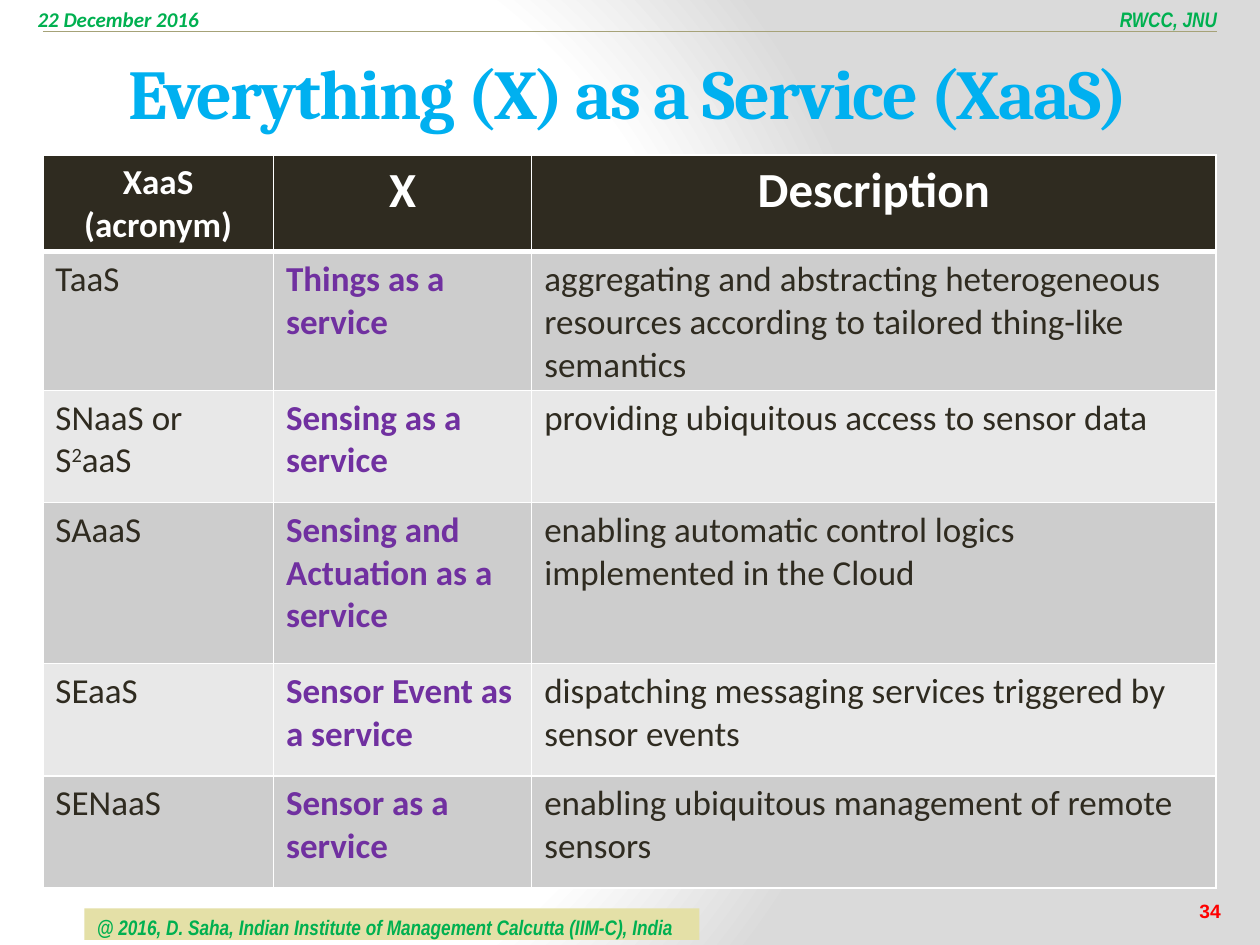
import pptx
import pptx.util
import pptx.dml.color
import pptx.enum.shapes
import pptx.enum.text
import pptx.oxml
import pptx.oxml.ns

PX = 9144  # 100 px to the inch
ALIGN = pptx.enum.text.PP_ALIGN
NS = pptx.oxml.ns.nsdecls("a")
WHITE, DARK, GREEN, PURPLE = "FFFFFF", "2F2B20", "00B050", "7030A0"
BANDS = ["CDCDCD", "E8E8E8"]

COLS = [183, 205, 543]
ROWS = [74, 106, 89, 128, 89, 89]
HEADS = ["XaaS (acronym)", "X", "Description"]
# A caret marks the next letter as superscript
BODY = [
    ["TaaS", "Things as a service",
     "aggregating and abstracting heterogeneous resources according to "
     "tailored thing-like semantics"],
    ["SNaaS or S^2aaS", "Sensing as a service",
     "providing ubiquitous access to sensor data"],
    ["SAaaS", "Sensing and Actuation as a service",
     "enabling automatic control logics implemented in the Cloud"],
    ["SEaaS", "Sensor Event as a service",
     "dispatching messaging services triggered by sensor events"],
    ["SENaaS", "Sensor as a service",
     "enabling ubiquitous management of remote sensors"],
]


def rgb(code):
    return pptx.dml.color.RGBColor.from_string(code)


def paint(shape, code):
    shape.fill.solid()
    shape.fill.fore_color.rgb = rgb(code)


def px(*nums):
    return [pptx.util.Emu(n * PX) for n in nums]


def style(para, size, face, color, bold=False, italic=False, align=ALIGN.LEFT):
    para.alignment = align
    for run in para.runs:
        font = run.font
        font.size, font.name = pptx.util.Pt(size), face
        font.bold, font.italic = bold, italic
        font.color.rgb = rgb(color)


def backdrop(slide):
    fill = slide.background.fill
    fill.gradient()
    stops = "".join(
        f'<a:gs pos="{pos}000"><a:srgbClr val="{code}"/></a:gs>'
        for pos, code in [(0, WHITE), (75, WHITE), (100, "DADADA")])
    grad = pptx.oxml.parse_xml(
        f'<a:gradFill {NS} rotWithShape="1"><a:gsLst>{stops}</a:gsLst>'
        '<a:path path="circle"><a:fillToRect l="20000" t="50000" '
        'r="100000" b="50000"/></a:path></a:gradFill>')
    old = slide.background._cSld.find(".//" + pptx.oxml.ns.qn("a:gradFill"))
    old.getparent().replace(old, grad)


def label(slide, box, text, size, face, color, italic=True,
          align=ALIGN.LEFT, fill=None):
    shape = slide.shapes.add_textbox(*px(*box))
    if fill:
        paint(shape, fill)
    frame = shape.text_frame
    frame.word_wrap = bool(fill)
    if italic:
        frame.margin_right = frame.margin_bottom = 0
    frame.text = text
    style(frame.paragraphs[0], size, face, color, True, italic, align)


def rule(slide, left, right, top):
    line = slide.shapes.add_connector(
        pptx.enum.shapes.MSO_CONNECTOR.STRAIGHT, *px(left, top, right, top))
    line.line.color.rgb = rgb("A6A278")
    line.line.width = pptx.util.Pt(1)
    line._element.spPr.append(pptx.oxml.parse_xml(f"<a:effectLst {NS}/>"))


def margins(slide):
    """Draw the header line and the labels around the slide."""
    label(slide, (942, 709, 39, 28), "34", 11, "Arial", "FF0000", False)
    label(slide, (67, 721, 488, 25),
          "@ 2016, D. Saha, Indian Institute of Management Calcutta (IIM-C), India",
          12, "Arial Narrow", GREEN, fill="E4E0A7")
    label(slide, (878, 0, 88, 25), "RWCC, JNU", 12, "Arial Narrow", GREEN,
          align=ALIGN.RIGHT)
    label(slide, (20, 0, 140, 25), "22 December 2016", 12, "Calibri", GREEN)
    rule(slide, 34, 966, 25)


def heading(slide, box, text):
    title = slide.shapes.title
    title.left, title.top, title.width, title.height = px(*box)
    frame = title.text_frame
    frame.text = text
    frame.auto_size = pptx.enum.text.MSO_AUTO_SIZE.NONE
    frame.vertical_anchor = pptx.enum.text.MSO_ANCHOR.MIDDLE
    para = frame.paragraphs[0]
    style(para, 40, "Cambria", "00B0F0", True, align=ALIGN.CENTER)
    para.runs[0].font._element.set("spc", "-100")


def borders(cell, row):
    wide = {"T": 3 if row == 1 else 1, "B": 3 if row == 0 else 1}
    props = cell._tc.get_or_add_tcPr()
    for spot, side in enumerate("LRTB"):
        props.insert(spot, pptx.oxml.parse_xml(
            f'<a:ln{side} {NS} w="{wide.get(side, 1) * 12700}"><a:solidFill>'
            f'<a:srgbClr val="{WHITE}"/></a:solidFill></a:ln{side}>'))


def write(cell, text):
    """Fill a cell, raising the letter after a caret."""
    para = cell.text_frame.paragraphs[0]
    base, caret, rest = text.partition("^")
    para.text = base
    if caret:
        high = para.add_run()
        high.text = rest[0]
        high.font._element.set("baseline", "30000")
        para.add_run().text = rest[1:]
    return para


def grid(slide, left, top):
    frame = slide.shapes.add_table(
        len(ROWS), len(COLS), *px(left, top, sum(COLS), sum(ROWS)))
    table = frame.table
    for col, width in zip(table.columns, px(*COLS)):
        col.width = width
    for row, height in zip(table.rows, px(*ROWS)):
        row.height = height
    for r, texts in enumerate([HEADS] + BODY):
        for c, text in enumerate(texts):
            cell = table.cell(r, c)
            para = write(cell, text)
            if r == 0:
                paint(cell, DARK)
                style(para, 28 if c else 20, "Calibri", WHITE, True,
                      align=ALIGN.CENTER)
            else:
                paint(cell, BANDS[(r - 1) % 2])
                style(para, 20, "Calibri", PURPLE if c == 1 else DARK, c == 1)
            borders(cell, r)


def main():
    deck = pptx.Presentation()
    deck.slide_width, deck.slide_height = px(1000, 750)
    slide = deck.slides.add_slide(deck.slide_layouts[5])
    backdrop(slide)
    margins(slide)
    heading(slide, (33, 30, 931, 85), "Everything (X) as a Service (XaaS)")
    grid(slide, 34, 123)
    deck.save("out.pptx")


if __name__ == "__main__":
    main()
